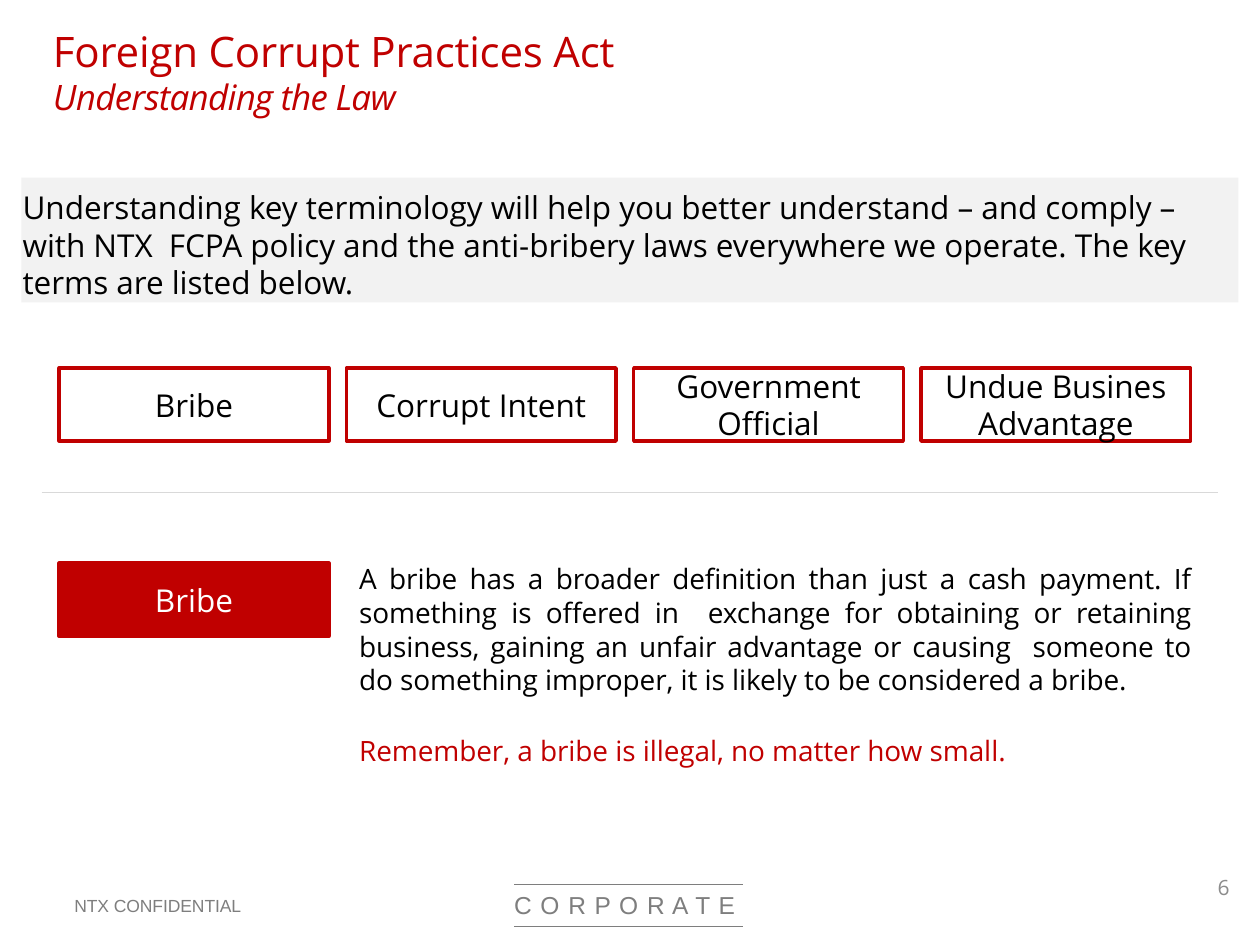
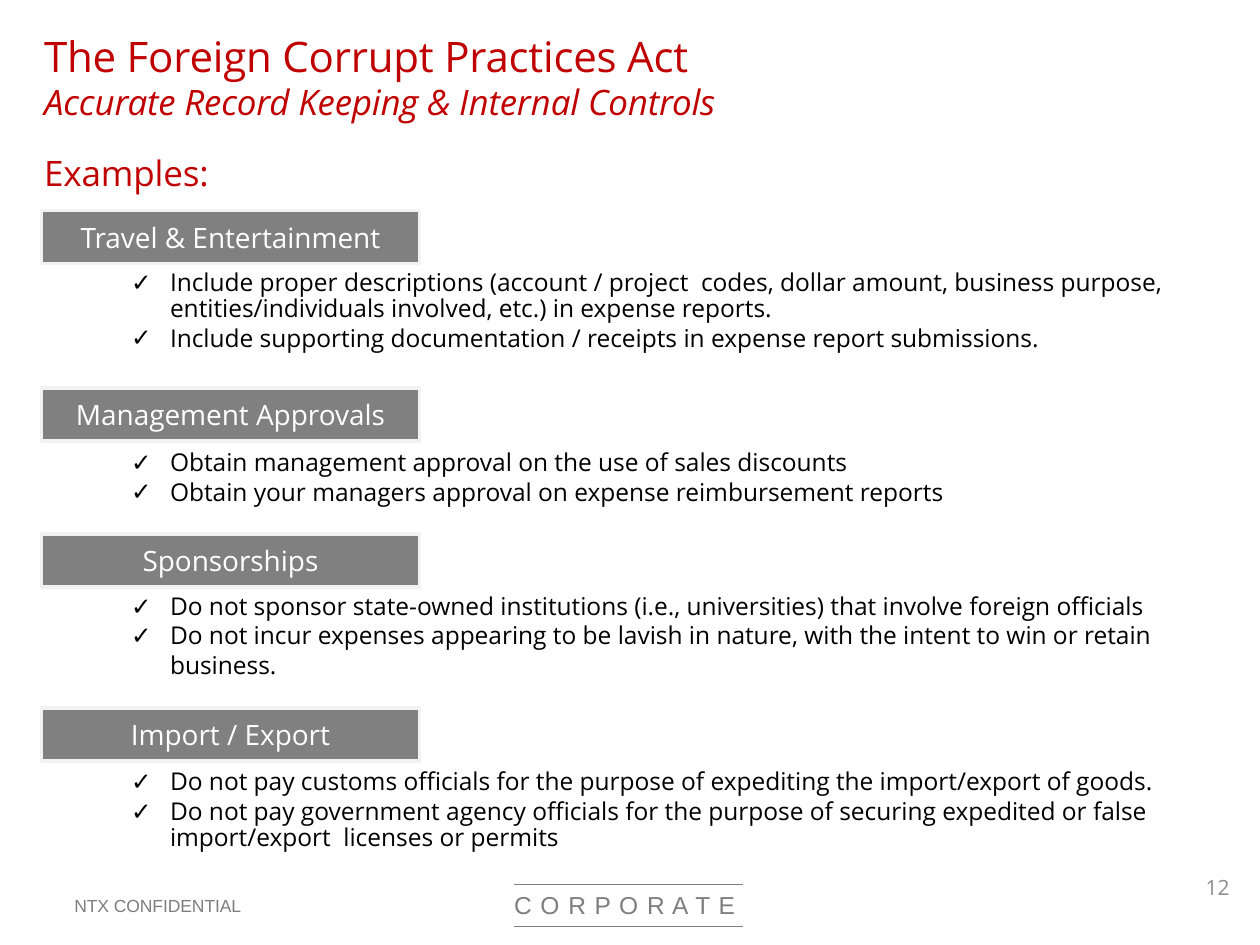
from dataclasses import dataclass
from lxml.etree import SubElement
from pptx import Presentation
from pptx.dml.color import RGBColor
from pptx.enum.shapes import MSO_CONNECTOR, MSO_SHAPE
from pptx.enum.text import MSO_ANCHOR, PP_ALIGN
from pptx.oxml.ns import qn
from pptx.util import Inches, Pt


@dataclass(frozen=True)
class Theme:
    font: str = "Open Sans"
    foot_font: str = "Arial"
    red: str = "C00000"
    black: str = "000000"
    white: str = "FFFFFF"
    pale: str = "F2F2F2"
    rule: str = "D9D9D9"
    bar: str = "808080"
    foot: str = "7E7E7E"
    page: str = "8C8C8C"
    title: int = 24
    sub: int = 20
    term: int = 18
    body: int = 16
    item: int = 14
    num: int = 12
    mark: int = 10


T = Theme()


def rgb(code):
    return RGBColor.from_string(code)


def add_para(para, text, size=T.body, color=T.black, font=T.font, italic=False,
             align=PP_ALIGN.LEFT, before=0, line=None, track=-0.03, bullet=None):
    """Put text in a paragraph; track is letter spacing in points."""
    if bullet:
        props = para._p.get_or_add_pPr()
        props.set("marL", str(Inches(0.31)))
        props.set("indent", str(-Inches(0.31)))
        SubElement(props, qn("a:buFont")).set("typeface", font)
        SubElement(props, qn("a:buChar")).set("char", bullet)
    para.alignment = align
    if before:
        para.space_before = Pt(before)
    if line:
        para.line_spacing = Pt(line)
    run = para.add_run()
    run.text = text
    run.font.name, run.font.size = font, Pt(size)
    run.font.italic = italic
    run.font.color.rgb = rgb(color)
    if track:
        run._r.get_or_add_rPr().set("spc", str(round(track * 100)))


def fill_text(frame, paras, **style):
    """Each entry is a string, or a string with its own format."""
    frame.word_wrap = True
    for i, entry in enumerate(paras):
        text, own = (entry, {}) if isinstance(entry, str) else entry
        para = frame.paragraphs[0] if i == 0 else frame.add_paragraph()
        add_para(para, text, **{**style, **own})


def set_inset(frame, top):
    frame.margin_left = frame.margin_right = frame.margin_bottom = 0
    frame.margin_top = Inches(top)


def add_text(slide, x, y, w, h, *paras, top=0, **style):
    box = slide.shapes.add_textbox(Inches(x), Inches(y), Inches(w), Inches(h))
    set_inset(box.text_frame, top)
    fill_text(box.text_frame, paras, **style)


def add_box(slide, x, y, w, h, text, fill=None, edge=None, **style):
    box = slide.shapes.add_shape(MSO_SHAPE.RECTANGLE, Inches(x), Inches(y),
                                 Inches(w), Inches(h))
    box.shadow.inherit = False
    if fill:
        box.fill.solid()
        box.fill.fore_color.rgb = rgb(fill)
    else:
        box.fill.background()
    if edge:
        box.line.color.rgb = rgb(edge)
        box.line.width = Pt(2)
    else:
        box.line.fill.background()
    box.text_frame.vertical_anchor = MSO_ANCHOR.MIDDLE
    fill_text(box.text_frame, [text],
              **{"align": PP_ALIGN.CENTER, "track": 0, **style})
    return box


def add_rule(slide, x, y, end, color, width):
    rule = slide.shapes.add_connector(MSO_CONNECTOR.STRAIGHT, Inches(x), Inches(y),
                                      Inches(end), Inches(y))
    rule.line.color.rgb = rgb(color)
    rule.line.width = Pt(width)
    SubElement(rule._element.spPr, qn("a:effectLst"))


def add_title(slide, x, y, w, head, sub, track):
    add_text(slide, x, y, w, 0.75, (head, {"size": T.title, "track": -0.1}),
             (sub, {"size": T.sub, "italic": True, "track": track}),
             top=0.02, color=T.red)


def add_foot(slide, page):
    for y in (7.35, 7.02):
        add_rule(slide, 4.08, y, 5.9, T.foot, 0.5)
    add_text(slide, 7.2, 6.94, 2.56, 0.2, page, size=T.num, color=T.page,
             align=PP_ALIGN.RIGHT, track=0)
    add_text(slide, 4.08, 7.07, 1.82, 0.25, "C O R P O R A T E", size=14,
             color=T.foot, font=T.foot_font, line=16.5, track=0.55)
    add_text(slide, 0.59, 7.1, 1.38, 0.18, "NTX CONFIDENTIAL", size=T.mark,
             color=T.foot, font=T.foot_font)


def add_term(slide, x, y, text, fill=None, color=T.black):
    add_box(slide, x, y, 2.14, 0.58, text, fill=fill, edge=T.red,
            size=T.term, color=color)


def add_group(slide, y, head, *items, gap=0.46):
    """A grey bar with its check list below."""
    left = 0.33
    add_box(slide, left, y, 3, 0.42, head, fill=T.bar, edge=T.pale,
            size=T.body, color=T.white)
    add_text(slide, left + 0.71, y + gap, 8.46, 0.6, *items,
             size=T.item, bullet="✓")


def draw_terms(slide):
    # Title and lead band
    add_title(slide, 0.42, 0.18, 6.28, "Foreign Corrupt Practices Act",
              "Understanding the Law", -0.42)
    band = add_box(slide, 0.17, 1.41, 9.66, 0.99,
                   "Understanding key terminology will help you better understand "
                   "– and comply – with NTX  FCPA policy and the anti-bribery laws "
                   "everywhere we operate. The key terms are listed below.",
                   fill=T.pale, size=T.term, align=PP_ALIGN.LEFT, track=-0.03)
    band.text_frame.vertical_anchor = MSO_ANCHOR.TOP
    set_inset(band.text_frame, 0.08)
    band.text_frame.margin_left = Inches(0.01)

    # Row of key terms
    terms = ("Bribe", "Corrupt Intent", "Government Official",
             "Undue Busines Advantage")
    for i, term in enumerate(terms):
        add_term(slide, 0.47 + 2.28 * i, 2.92, term)
    add_rule(slide, 0.33, 3.91, 9.67, T.rule, 0.5)

    # Meaning of the first term
    add_term(slide, 0.47, 4.47, terms[0], fill=T.red, color=T.white)
    add_text(slide, 2.85, 4.44, 6.61, 1.66,
             "A bribe has a broader definition than just a cash payment. If "
             "something is offered in  exchange for obtaining or retaining "
             "business, gaining an unfair advantage or causing  someone to do "
             "something improper, it is likely to be considered a bribe.",
             ("Remember, a bribe is illegal, no matter how small.",
              {"color": T.red, "before": 21}),
             top=0.02, align=PP_ALIGN.JUSTIFY)
    add_foot(slide, "6")


def draw_cases(slide):
    # Title and heading
    add_title(slide, 0.35, 0.22, 6.87, "The Foreign Corrupt Practices Act",
              "Accurate Record Keeping & Internal Controls", -0.1)
    add_text(slide, 0.35, 1.19, 3, 0.4, "Examples:", top=0.01,
             size=T.sub, color=T.red, track=-0.1)

    # Groups of rules
    tight = {"line": 14.8}
    add_group(slide, 1.67, "Travel & Entertainment",
              ("Include proper descriptions (account / project  codes, dollar "
               "amount, business purpose, entities/individuals involved, etc.) "
               "in expense reports.", tight),
              "Include supporting documentation / receipts in expense report "
              "submissions.", gap=0.48)
    add_group(slide, 3.08, "Management Approvals",
              "Obtain management approval on the use of sales discounts",
              "Obtain your managers approval on expense reimbursement reports",
              gap=0.47)
    add_group(slide, 4.24, "Sponsorships",
              "Do not sponsor state-owned institutions (i.e., universities) that "
              "involve foreign officials",
              "Do not incur expenses appearing to be lavish in nature, with the "
              "intent to win or retain business.", gap=0.45)
    add_group(slide, 5.62, "Import / Export",
              "Do not pay customs officials for the purpose of expediting the "
              "import/export of goods.",
              ("Do not pay government agency officials for the purpose of "
               "securing expedited or false import/export  licenses or permits",
               {**tight, "before": 2.6}))
    add_foot(slide, "12")


def main():
    deck = Presentation()
    deck.slide_width, deck.slide_height = Inches(10), Inches(7.5)
    for draw in (draw_terms, draw_cases):
        draw(deck.slides.add_slide(deck.slide_layouts[6]))
    deck.save("out.pptx")


if __name__ == "__main__":
    main()
